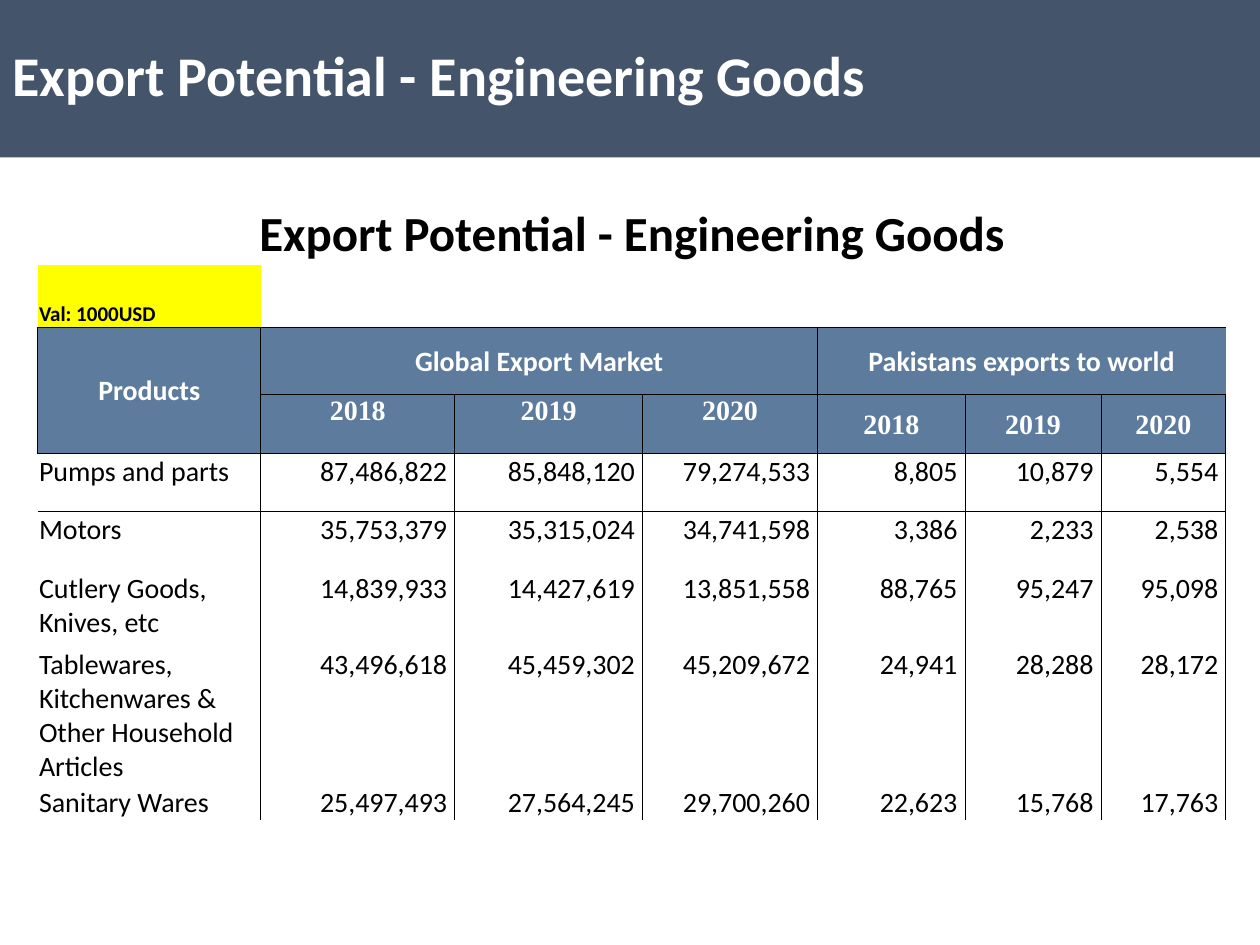
from dataclasses import dataclass

from lxml import etree
from pptx import Presentation
from pptx.dml.color import RGBColor
from pptx.enum.text import MSO_ANCHOR, PP_ALIGN
from pptx.oxml.ns import qn
from pptx.util import Inches, Pt

LEFT, CENTER, RIGHT = PP_ALIGN.LEFT, PP_ALIGN.CENTER, PP_ALIGN.RIGHT
TOP, MIDDLE, BOTTOM = MSO_ANCHOR.TOP, MSO_ANCHOR.MIDDLE, MSO_ANCHOR.BOTTOM
TITLE_ONLY = 5
NO_STYLE = "{2D5ABB26-0587-4C30-8999-92F81FD0307C}"


@dataclass(frozen=True)
class Theme:
    band: str = "44546A"
    header: str = "5D7B9D"
    unit: str = "FFFF00"
    white: str = "FFFFFF"
    black: str = "000000"
    font: str = "Calibri"
    year_font: str = "Times New Roman"
    title_size: int = 32
    heading_size: int = 28
    unit_size: int = 12
    body_size: int = 16
    thin: float = 0.5
    thick: float = 1


THEME = Theme()
HEADING = "Export Potential - Engineering Goods"
COLUMN_WIDTHS = [1.77, 1.54, 1.49, 1.39, 1.17, 1.08, 0.99]
ROW_HEIGHTS = [0.66, 0.5, 0.53, 0.47, 0.46, 0.47, 0.6, 0.93, 0.21]
HEADING_ROW, UNIT_ROW, GROUP_ROW, YEAR_ROW, FIRST_PRODUCT_ROW = range(5)
LAST_COLUMN = len(COLUMN_WIDTHS) - 1
GROUPS = [("Global Export Market", 1, TOP), ("Pakistans exports to world", 4, MIDDLE)]
YEARS = ["2018", "2019", "2020"]
PRODUCTS = [
    ("Pumps and parts", 87486822, 85848120, 79274533, 8805, 10879, 5554),
    ("Motors", 35753379, 35315024, 34741598, 3386, 2233, 2538),
    ("Cutlery Goods, Knives, etc", 14839933, 14427619, 13851558, 88765, 95247, 95098),
    ("Tablewares, Kitchenwares & Other Household Articles",
     43496618, 45459302, 45209672, 24941, 28288, 28172),
    ("Sanitary Wares", 25497493, 27564245, 29700260, 22623, 15768, 17763),
]


def format_text(frame, size, color, bold, align, font=THEME.font):
    for paragraph in frame.paragraphs:
        paragraph.alignment = align
        for run in paragraph.runs:
            run.font.name = font
            run.font.size = Pt(size)
            run.font.bold = bold
            run.font.color.rgb = RGBColor.from_string(color)


def write_cell(cell, text, size=THEME.body_size, color=THEME.black, bold=False,
               align=LEFT, anchor=TOP, font=THEME.font, right=0.01):
    cell.text_frame.text = text
    cell.margin_left = cell.margin_top = Inches(0.01)
    cell.margin_right, cell.margin_bottom = Inches(right), 0
    cell.vertical_anchor = anchor
    format_text(cell.text_frame, size, color, bold, align, font)


def paint_cell(cell, color=None, **edges):
    """Draw the edges, given as L, R, T and B widths, and then the fill."""
    properties = cell._tc.get_or_add_tcPr()
    for side in "LRTB":
        if side in edges:
            line = etree.SubElement(properties, qn(f"a:ln{side}"), w=str(Pt(edges[side])))
            fill = etree.SubElement(line, qn("a:solidFill"))
            etree.SubElement(fill, qn("a:srgbClr"), val=THEME.black)
    if color:
        cell.fill.solid()
        cell.fill.fore_color.rgb = RGBColor.from_string(color)
    else:
        cell.fill.background()


def add_header(table, text, top, left, bottom, right, top_width=THEME.thin, **style):
    """Write a header block and outline it, merging when it covers several cells."""
    origin = table.cell(top, left)
    if (top, left) != (bottom, right):
        origin.merge(table.cell(bottom, right))
    write_cell(origin, text, color=THEME.white, bold=True, align=CENTER, **style)
    for row in range(top, bottom + 1):
        for column in range(left, right + 1):
            edges = {}
            if column == left:
                edges["L"] = THEME.thin
            if column == right:
                edges["R"] = THEME.thin
            if row == top:
                edges["T"] = top_width
            if row == bottom:
                edges["B"] = THEME.thin
            paint_cell(table.cell(row, column), THEME.header, **edges)


def add_title(slide):
    title = slide.shapes.title
    title.left, title.top, title.width, title.height = 0, 0, Inches(10), Inches(1.25)
    title.fill.solid()
    title.fill.fore_color.rgb = RGBColor.from_string(THEME.band)
    title.text_frame.text = HEADING
    title.text_frame.vertical_anchor = MIDDLE
    title.text_frame.paragraphs[0].line_spacing = 0.9
    format_text(title.text_frame, THEME.title_size, THEME.white, True, LEFT)


def add_plain_table(slide):
    table = slide.shapes.add_table(
        len(ROW_HEIGHTS), len(COLUMN_WIDTHS), Inches(0.3), Inches(1.44),
        Inches(sum(COLUMN_WIDTHS)), Inches(sum(ROW_HEIGHTS))).table
    table.first_row = table.horz_banding = False
    table._tbl.tblPr.find(qn("a:tableStyleId")).text = NO_STYLE
    for column, width in zip(table.columns, COLUMN_WIDTHS):
        column.width = Inches(width)
    for row, height in zip(table.rows, ROW_HEIGHTS):
        row.height = Inches(height)
    return table


def fill_top_rows(table):
    heading = table.cell(HEADING_ROW, 0)
    heading.merge(table.cell(HEADING_ROW, LAST_COLUMN))
    write_cell(heading, HEADING, THEME.heading_size, bold=True, align=CENTER, anchor=BOTTOM)
    write_cell(table.cell(UNIT_ROW, 0), "Val: 1000USD", THEME.unit_size, bold=True, anchor=BOTTOM)
    for column in range(LAST_COLUMN + 1):
        paint_cell(table.cell(HEADING_ROW, column))
        paint_cell(table.cell(UNIT_ROW, column), None if column else THEME.unit, B=THEME.thick)


def fill_headers(table):
    add_header(table, "Products", GROUP_ROW, 0, YEAR_ROW, 0, THEME.thick, anchor=MIDDLE)
    for group, first, year_anchor in GROUPS:
        add_header(table, group, GROUP_ROW, first, GROUP_ROW, first + len(YEARS) - 1,
                   THEME.thick, anchor=MIDDLE)
        for column, year in enumerate(YEARS, first):
            add_header(table, year, YEAR_ROW, column, YEAR_ROW, column,
                       anchor=year_anchor, font=THEME.year_font)


def fill_products(table):
    for row, (product, *values) in enumerate(PRODUCTS, FIRST_PRODUCT_ROW):
        write_cell(table.cell(row, 0), product)
        for column, value in enumerate(values, 1):
            write_cell(table.cell(row, column), f"{value:,}", align=RIGHT, right=0.06)
        for column in range(LAST_COLUMN + 1):
            edges = {"R": THEME.thin}
            if column:
                edges["L"] = THEME.thin
            if row == FIRST_PRODUCT_ROW:
                edges["T"] = THEME.thin
            paint_cell(table.cell(row, column), **edges)


def main():
    presentation = Presentation()
    presentation.slide_width, presentation.slide_height = Inches(10), Inches(7.5)
    slide = presentation.slides.add_slide(presentation.slide_layouts[TITLE_ONLY])

    # Title band
    add_title(slide)

    # Export table
    table = add_plain_table(slide)
    fill_top_rows(table)
    fill_headers(table)
    fill_products(table)

    presentation.save("out.pptx")


if __name__ == "__main__":
    main()
